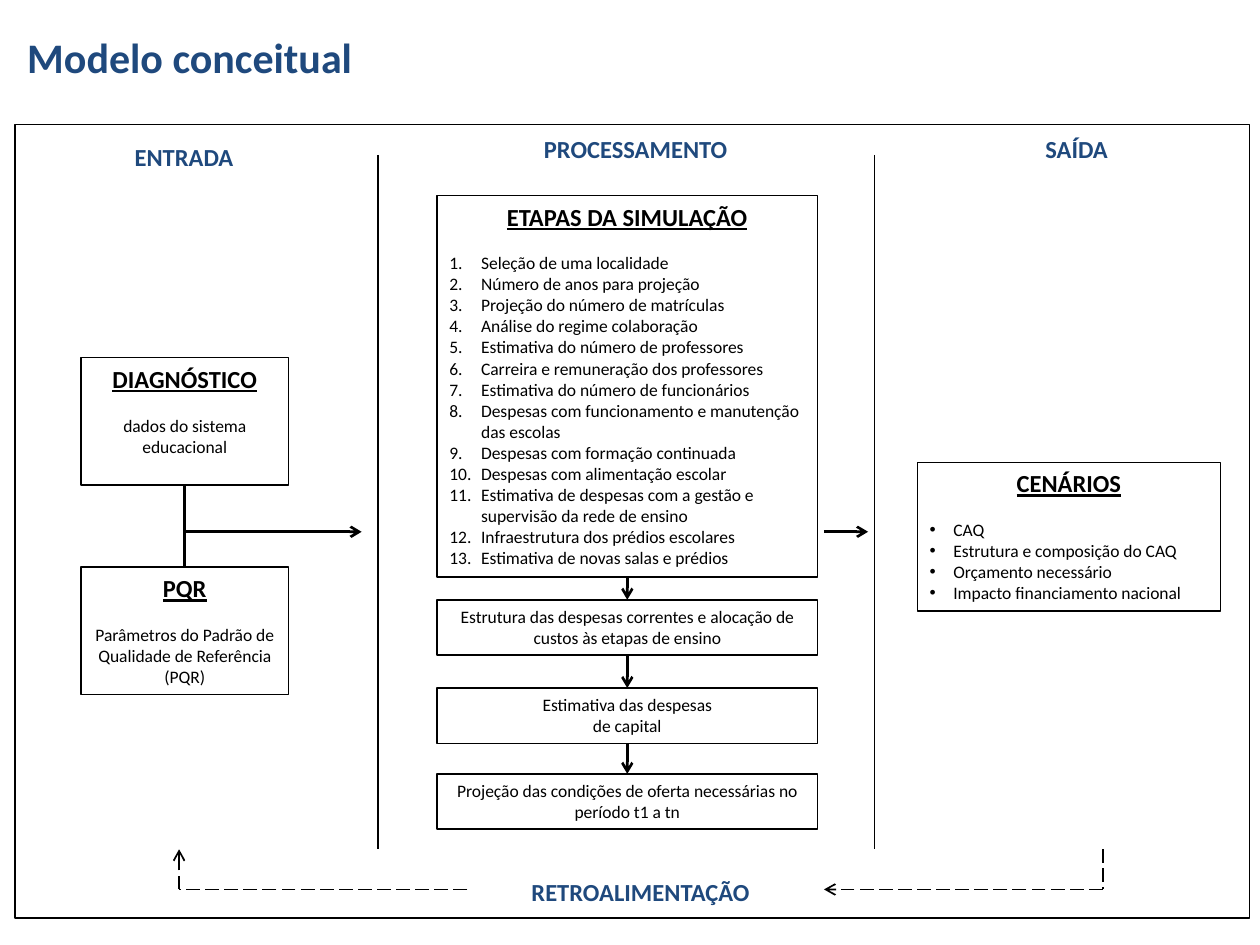
from itertools import pairwise
from lxml.etree import SubElement as Sub
from pptx import Presentation
from pptx.dml.color import RGBColor as Rgb
from pptx.enum.dml import MSO_LINE as Dash
from pptx.enum.shapes import MSO_CONNECTOR as Conn, MSO_SHAPE as Kind
from pptx.enum.text import MSO_ANCHOR as Anchor, PP_ALIGN as Align
from pptx.oxml.ns import qn
from pptx.util import Cm, Pt

# Content
COL = {"ink": "000000", "head": "1F497D"}
FONT = "Calibri"

# Labels: text, left, top, width, height, size, alignment
LABELS = [
    ("Modelo conceitual", 0.3, 0.51, 22.71, 1.27, 24, Align.LEFT),
    ("ENTRADA", 2.01, 2.74, 3.4, 0.86, 14, Align.CENTER),
    ("PROCESSAMENTO", 10.62, 2.57, 4.39, 0.86, 14, Align.CENTER),
    ("SAÍDA", 19.51, 2.57, 4.39, 0.86, 14, Align.CENTER),
    ("RETROALIMENTAÇÃO", 10.21, 17.55, 5.41, 0.86, 14, Align.CENTER),
]
STEPS = [
    "Seleção de uma localidade",
    "Número de anos para projeção",
    "Projeção do número de matrículas",
    "Análise do regime colaboração",
    "Estimativa do número de professores",
    "Carreira e remuneração dos professores",
    "Estimativa do número de funcionários",
    "Despesas com funcionamento e manutenção das escolas",
    "Despesas com formação continuada",
    "Despesas com alimentação escolar",
    "Estimativa de despesas com a gestão e supervisão da rede de ensino",
    "Infraestrutura dos prédios escolares",
    "Estimativa de novas salas e prédios",
]
RESULTS = [
    "CAQ",
    "Estrutura e composição do CAQ",
    "Orçamento necessário",
    "Impacto financiamento nacional",
]
# Inputs: top, heading, body
INPUTS = [
    (7.21, "DIAGNÓSTICO", ["dados do sistema educacional"]),
    (11.43, "PQR", ["Parâmetros do Padrão de Qualidade de Referência (PQR)"]),
]
# Flow: top, height, heading, body, list mark
FLOW = [
    (3.94, 7.7, "ETAPAS DA SIMULAÇÃO", STEPS, "num"),
    (12.09, 1.12, None, ["Estrutura das despesas correntes e alocação de "
                         "custos às etapas de ensino"], None),
    (13.87, 1.12, None, ["Estimativa das despesas", "de capital"], None),
    (15.6, 1.12, None, ["Projeção das condições de oferta necessárias no "
                        "período t1 a tn"], None),
]
IN_X, IN_W, IN_H = 1.63, 4.19, 2.57
FLOW_X, FLOW_W = 8.81, 7.67
TOP, END, LOOP, MID = 3.12, 17.12, 17.93, 10.72

deck = Presentation()
deck.slide_width, deck.slide_height = Cm(25.4), Cm(19.05)
slide = deck.slides.add_slide(deck.slide_layouts[6])
parts = slide.shapes


def style(para, size, color="ink", bold=False, under=False):
    for run in para.runs:
        font = run.font
        font.name, font.size, font.bold = FONT, Pt(size), bold
        font.underline = under
        font.color.rgb = Rgb.from_string(COL[color])


def mark(para, kind):
    props = para._p.get_or_add_pPr()
    ind = Cm(0.64 if kind == "num" else 0.48)
    props.set("marL", str(ind))
    props.set("indent", str(-ind))
    if kind == "num":
        Sub(props, qn("a:buFont"), typeface="+mj-lt")
        Sub(props, qn("a:buAutoNum"), type="arabicPeriod")
    else:
        Sub(props, qn("a:buFont"), typeface="Arial")
        Sub(props, qn("a:buChar"), char="•")


def label(text, x, y, w, h, size, align):
    frame = parts.add_textbox(Cm(x), Cm(y), Cm(w), Cm(h)).text_frame
    frame.word_wrap = True
    frame.text = text
    para = frame.paragraphs[0]
    para.alignment = align
    style(para, size, "head", bold=True)


def box(x, y, w, h, head=None, body=(), kind=None, width=1):
    shape = parts.add_shape(Kind.RECTANGLE, Cm(x), Cm(y), Cm(w), Cm(h))
    shape.shadow.inherit = False
    shape.fill.background()
    shape.line.color.rgb = Rgb.from_string(COL["ink"])
    shape.line.width = Pt(width)
    frame = shape.text_frame
    frame.word_wrap = True
    frame.vertical_anchor = Anchor.TOP
    frame.text = "\n".join(([head] if head else []) + list(body))
    for i, para in enumerate(frame.paragraphs):
        title = bool(head) and i == 0
        listed = bool(kind) and not title
        para.alignment = Align.LEFT if listed else Align.CENTER
        style(para, 14 if title else 10, bold=title, under=title)
        if title:
            para.space_after = Pt(12.2)
        if listed:
            mark(para, kind)


def line(x1, y1, x2, y2, width=1.5, arrow=False, dash=False):
    wire = parts.add_connector(Conn.STRAIGHT, Cm(x1), Cm(y1), Cm(x2), Cm(y2))
    wire.line.color.rgb = Rgb.from_string(COL["ink"])
    wire.line.width = Pt(width)
    if dash:
        wire.line.dash_style = Dash.LONG_DASH
    if arrow:
        Sub(wire.line._get_or_add_ln(), qn("a:tailEnd"), type="arrow")
    Sub(wire._element.spPr, qn("a:effectLst"))


# Frame, labels and column dividers
box(0.3, 2.51, 24.89, 16)
for item in LABELS:
    label(*item)
for x in (7.62, 17.63):
    line(x, TOP, x, END, 0.75)

# Feedback loop
for ends in ([(22.23, END), (22.23, LOOP), (16.61, LOOP)],
             [(9.42, LOOP), (3.61, LOOP), (3.61, END)]):
    for i, (a, b) in enumerate(pairwise(ends)):
        line(*a, *b, 1, arrow=i == 1, dash=True)

# Inputs joined by a trunk
for y, head, body in INPUTS:
    box(IN_X, y, IN_W, IN_H, head, body)
trunk = IN_X + IN_W / 2
line(trunk, INPUTS[0][0] + IN_H, trunk, INPUTS[1][0])
line(trunk, MID, 7.29, MID, arrow=True)

# Processing chain
for y, h, head, body, kind in FLOW:
    box(FLOW_X, y, FLOW_W, h, head, body, kind)
axis = FLOW_X + FLOW_W / 2
for up, down in pairwise(FLOW):
    line(axis, up[0] + up[1], axis, down[0], arrow=True)

# Output
line(16.61, MID, 17.5, MID, arrow=True)
box(18.49, 9.32, 6.12, 3, "CENÁRIOS", RESULTS, "dot", 0.75)

deck.save("out.pptx")
